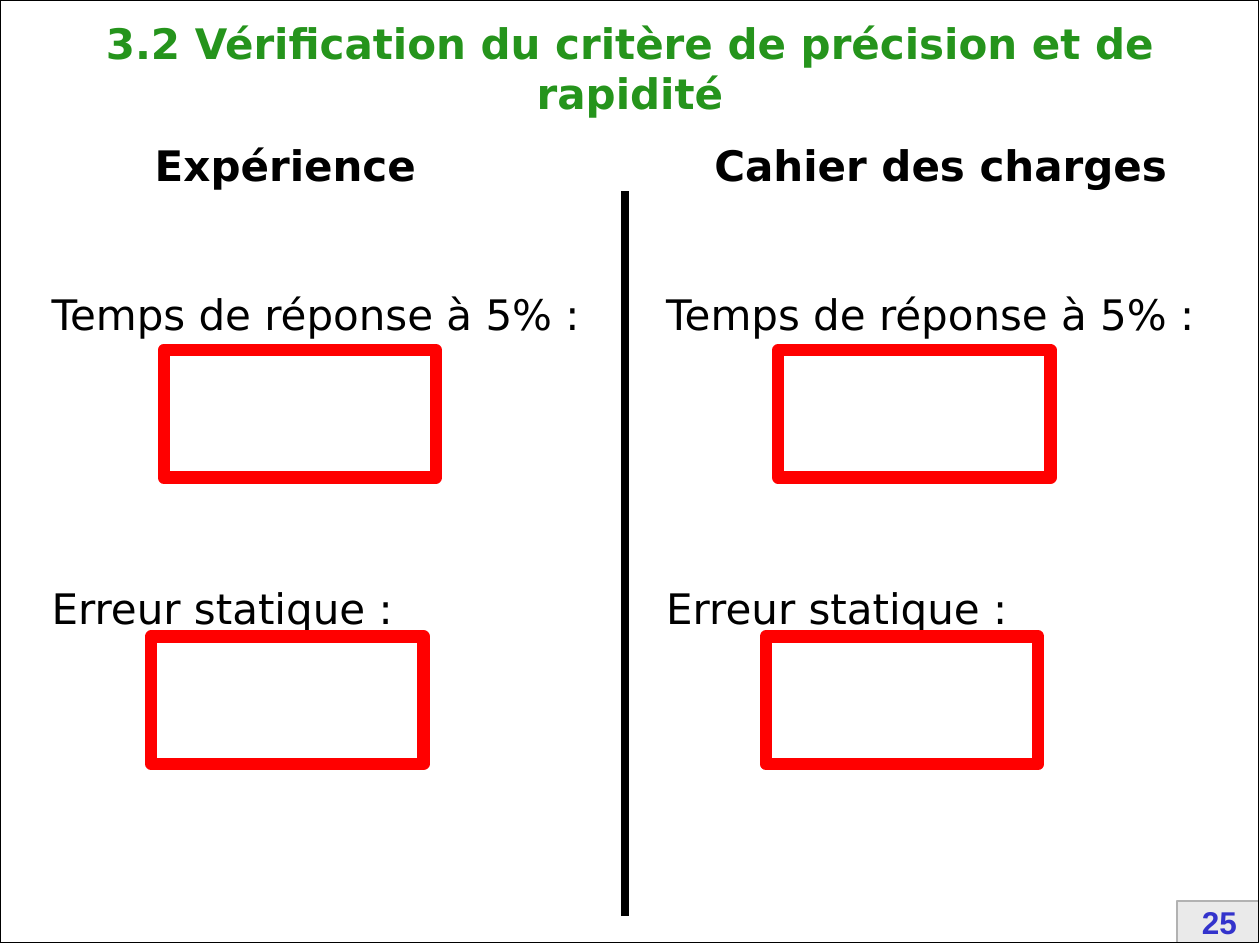
import pptx
import pptx.util
import pptx.dml.color
import pptx.enum.shapes
import pptx.enum.text
import pptx.oxml.ns
import lxml.etree

Cm = pptx.util.Cm
Pt = pptx.util.Pt
RGBColor = pptx.dml.color.RGBColor
Align = pptx.enum.text.PP_ALIGN
Anchor = pptx.enum.text.MSO_ANCHOR
RECTANGLE = pptx.enum.shapes.MSO_SHAPE.RECTANGLE

GREEN = RGBColor(0x25, 0x94, 0x1C)
BLACK = RGBColor(0, 0, 0)
RED = RGBColor(0xFF, 0, 0)
BLUE = RGBColor(0x33, 0x33, 0xCC)
PALE_GREY = RGBColor(0xEA, 0xEA, 0xEA)
MID_GREY = RGBColor(0xB2, 0xB2, 0xB2)
WHITE = RGBColor(0xFF, 0xFF, 0xFF)

PAGE_WIDTH, PAGE_HEIGHT = 25.4, 19.05
TEXT_HEIGHT = 1.27
ANSWER_WIDTH, ANSWER_HEIGHT = 5.49, 2.57
HEADING_TOP = 2.69

# label, label top, label width, answer offset from the column and the label
CRITERIA = [
    ("Temps de réponse à 5% :", 5.69, 12.09, 2.51, 1.37),
    ("Erreur statique :", 11.61, 11.38, 2.26, 1.22),
]
# heading, column left, heading indent, heading width
COLUMNS = [
    ("Expérience", 0.79, 2.08, 7.49),
    ("Cahier des charges", 13.18, 0.97, 10.34),
]


def add_text(page, text, left, top, width, height, size=24, font="DejaVu Sans",
             color=BLACK, bold=False, align=Align.LEFT, anchor=Anchor.MIDDLE):
    box = page.shapes.add_textbox(Cm(left), Cm(top), Cm(width), Cm(height))
    frame = box.text_frame
    frame.word_wrap = True
    frame.vertical_anchor = anchor
    para = frame.paragraphs[0]
    para.text = text
    para.alignment = align
    para.font.size = Pt(size)
    para.font.name = font
    para.font.bold = bold
    para.font.color.rgb = color


def add_frame(page, left, top, width, height, color, weight):
    """Outlined rectangle without fill."""
    box = page.shapes.add_shape(RECTANGLE, Cm(left), Cm(top), Cm(width), Cm(height))
    box.shadow.inherit = False
    box.fill.background()
    box.line.color.rgb = color
    box.line.width = Pt(weight)


def add_bevel_edge(page, points, color):
    """Open corner line along one side of the page number button."""
    builder = page.shapes.build_freeform(Cm(points[0][0]), Cm(points[0][1]), scale=1.0)
    builder.add_line_segments([(Cm(x), Cm(y)) for x, y in points[1:]], close=False)
    edge = builder.convert_to_shape()
    edge.shadow.inherit = False
    edge.fill.background()
    edge.line.color.rgb = color
    edge.line.width = Pt(1)


def add_page_number(page, number, left, top, width, height):
    right, bottom = left + width, top + height
    button = page.shapes.add_shape(RECTANGLE, Cm(left), Cm(top), Cm(width), Cm(height))
    button.shadow.inherit = False
    button.fill.solid()
    button.fill.fore_color.rgb = PALE_GREY
    button.line.fill.background()
    add_bevel_edge(page, [(right, top), (left, top), (left, bottom)], MID_GREY)
    add_bevel_edge(page, [(right, top), (right, bottom), (left, bottom)], WHITE)
    add_text(page, number, left + 0.1, top - 0.08, width - 0.15, height + 0.18,
             size=18, font="Arial", color=BLUE, bold=True, align=Align.CENTER,
             anchor=Anchor.TOP)


def add_divider(page, x, top, bottom):
    line = page.shapes.add_connector(pptx.enum.shapes.MSO_CONNECTOR.STRAIGHT,
                                     Cm(x), Cm(top), Cm(x), Cm(bottom))
    line.line.color.rgb = BLACK
    line.line.width = Pt(5)
    lxml.etree.SubElement(line._element.spPr, pptx.oxml.ns.qn("a:effectLst"))


def add_column(page, heading, left, heading_indent, heading_width):
    """Heading, then each criterion with an empty answer frame."""
    add_text(page, heading, left + heading_indent, HEADING_TOP, heading_width,
             TEXT_HEIGHT, bold=True)
    for label, top, width, answer_indent, answer_drop in CRITERIA:
        add_text(page, label, left, top, width, TEXT_HEIGHT)
        add_frame(page, left + answer_indent, top + answer_drop,
                  ANSWER_WIDTH, ANSWER_HEIGHT, RED, 7)


def main():
    deck = pptx.Presentation()
    deck.slide_width, deck.slide_height = Cm(PAGE_WIDTH), Cm(PAGE_HEIGHT)
    page = deck.slides.add_slide(deck.slide_layouts[6])
    add_page_number(page, "25", 23.73, 18.16, 1.65, 0.85)
    add_frame(page, 0, 0, 25.37, 19, BLACK, 1)
    add_text(page, "3.2 Vérification du critère de précision et de rapidité",
             0, 0.23, PAGE_WIDTH, 2.31, color=GREEN, bold=True,
             align=Align.CENTER, anchor=Anchor.TOP)
    add_divider(page, 12.6, 3.86, 18.47)
    for column in COLUMNS:
        add_column(page, *column)
    deck.save("out.pptx")


if __name__ == "__main__":
    main()
